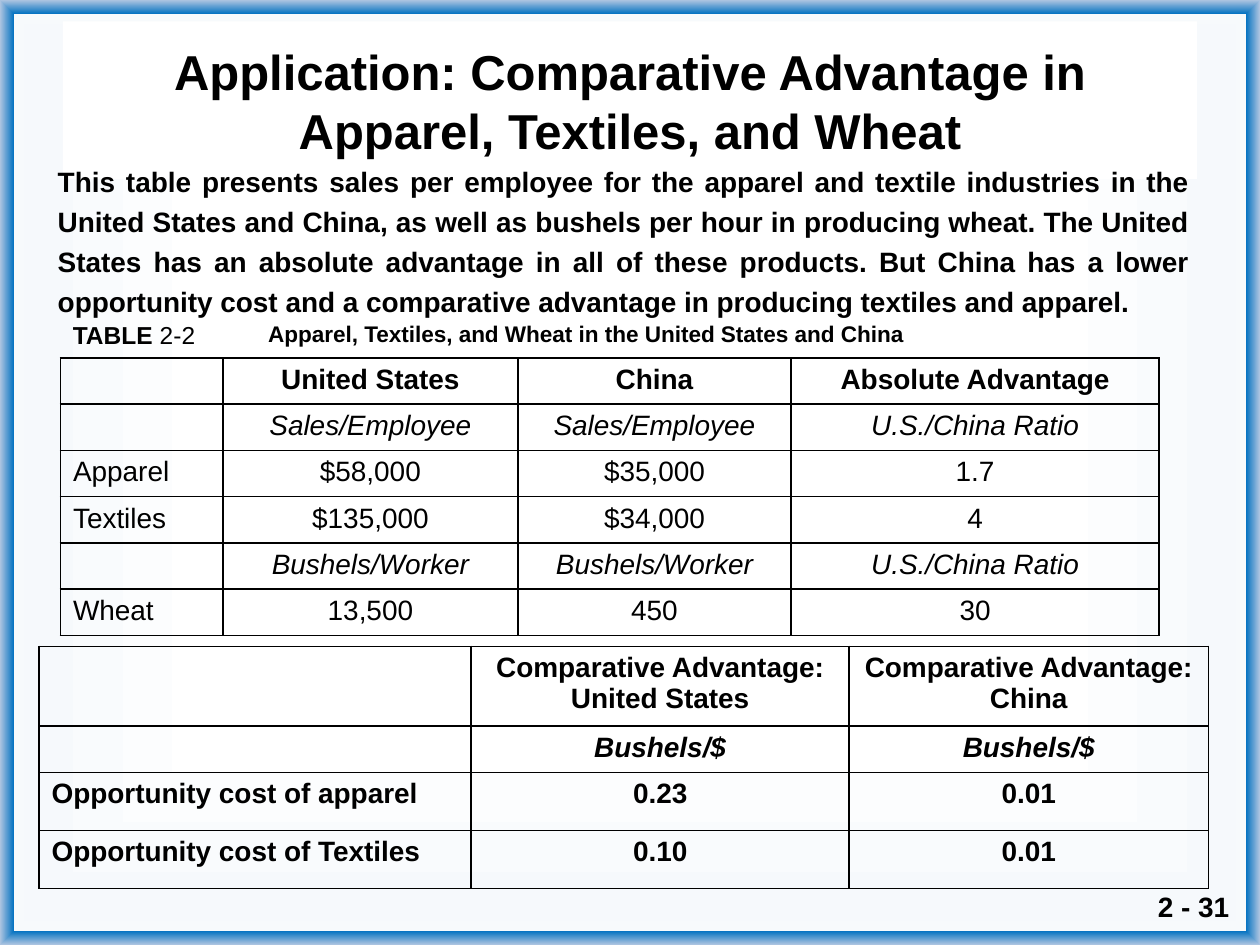
from lxml import etree
from pptx import Presentation
from pptx.dml.color import RGBColor
from pptx.enum import text
from pptx.oxml import parse_xml
from pptx.oxml.ns import qn
from pptx.util import Inches, Pt

BLACK = RGBColor(0x00, 0x00, 0x00)
WHITE = RGBColor(0xFF, 0xFF, 0xFF)
FRAME_STOPS = [
    (53, WHITE),
    (95, RGBColor(0xF6, 0xF9, 0xFC)),
    (97, RGBColor(0xF7, 0xFA, 0xFC)),
    (97, RGBColor(0x00, 0x70, 0xC0)),
    (100, RGBColor(0xB0, 0xC6, 0xE1)),
]
LEFT, CENTER, JUSTIFY = (text.PP_ALIGN.LEFT, text.PP_ALIGN.CENTER,
                         text.PP_ALIGN.JUSTIFY)
MAIN_NS = "http://schemas.openxmlformats.org/drawingml/2006/main"


class Page:
    """Holds the style and the slide being built."""

    font_name = "Arial"
    body_size = 16
    border = Pt(1)

    def __init__(self, deck):
        self.slide = deck.slides.add_slide(deck.slide_layouts[6])

    def style(self, paragraph, size=body_size, bold=True, italic=False, align=LEFT):
        paragraph.alignment = align
        font = paragraph.font
        font.name, font.size = self.font_name, Pt(size)
        font.bold, font.italic = bold, italic
        font.color.rgb = BLACK

    def background(self, stops):
        fill = self.slide.background.fill
        fill.gradient()
        stop_xml = "".join(
            f'<a:gs pos="{pos * 1000}"><a:srgbClr val="{color}"/></a:gs>'
            for pos, color in stops)
        gradient = parse_xml(
            f'<a:gradFill xmlns:a="{MAIN_NS}" rotWithShape="1">'
            f'<a:gsLst>{stop_xml}</a:gsLst><a:path path="shape">'
            '<a:fillToRect l="50000" t="50000" r="50000" b="50000"/>'
            '</a:path></a:gradFill>')
        properties = self.slide.background._cSld.bg.bgPr
        properties.replace(properties.find(qn("a:gradFill")), gradient)

    def text(self, box, words, fill=None, anchor=text.MSO_ANCHOR.TOP,
             wrap=True, before=0, spacing=None, **style):
        shape = self.slide.shapes.add_textbox(*map(Inches, box))
        if fill is not None:
            shape.fill.solid()
            shape.fill.fore_color.rgb = fill
        frame = shape.text_frame
        frame.word_wrap, frame.vertical_anchor = wrap, anchor
        paragraph = frame.paragraphs[0]
        paragraph.text = words
        paragraph.space_before = Pt(before)
        if spacing:
            paragraph.line_spacing = spacing
        self.style(paragraph, **style)
        return paragraph

    def outline(self, cell):
        properties = cell._tc.get_or_add_tcPr()
        for index, side in enumerate(("lnL", "lnR", "lnT", "lnB")):
            line = etree.Element(qn(f"a:{side}"), w=str(self.border))
            solid = etree.SubElement(line, qn("a:solidFill"))
            etree.SubElement(solid, qn("a:srgbClr"), val=str(BLACK))
            properties.insert(index, line)

    def table(self, left, top, columns, heights, rows, bold_rows, italic_rows):
        table = self.slide.shapes.add_table(
            len(rows), len(columns), Inches(left), Inches(top),
            Inches(sum(columns)), Inches(sum(heights))).table
        table.first_row = table.horz_banding = False
        for column, width in zip(table.columns, columns):
            column.width = Inches(width)
        for r, (height, values) in enumerate(zip(heights, rows)):
            table.rows[r].height = Inches(height)
            for c, value in enumerate(values):
                cell = table.cell(r, c)
                cell.text = value
                cell.fill.background()
                self.outline(cell)
                for paragraph in cell.text_frame.paragraphs:
                    self.style(paragraph, bold=r in bold_rows,
                               italic=r in italic_rows,
                               align=CENTER if c else LEFT)


def main():
    deck = Presentation()
    deck.slide_width, deck.slide_height = Inches(10), Inches(7.5)
    page = Page(deck)
    page.background(FRAME_STOPS)

    # Slide number, title and introduction
    page.text((9.09, 7.01, 1.15, 0.37), "2 - 31", wrap=False)
    page.text((0.5, 0.17, 9, 1.25),
              "Application: Comparative Advantage in Apparel, Textiles, and Wheat",
              fill=WHITE, anchor=text.MSO_ANCHOR.MIDDLE, size=28, align=CENTER)
    page.text((0.36, 1.2, 9.18, 1.3),
              "This table presents sales per employee for the apparel and textile "
              "industries in the United States and China, as well as bushels per "
              "hour in producing wheat. The United States has an absolute advantage "
              "in all of these products. But China has a lower opportunity cost and "
              "a comparative advantage in producing textiles and apparel.",
              before=6.2, spacing=1.2, align=JUSTIFY)

    # Table caption
    label = page.text((0.48, 2.49, 1.43, 0.36), "TABLE", size=14, before=2.8)
    number = label.add_run()
    number.text = " 2-2"
    number.font.bold = False
    page.text((2.03, 2.49, 5.66, 0.35),
              "Apparel, Textiles, and Wheat in the United States and China",
              size=12.9, before=2.6)

    # Absolute advantage
    page.table(0.48, 2.84, [1.29, 2.34, 2.17, 2.92], [0.35] * 6, [
        ["", "United States", "China", "Absolute Advantage"],
        ["", "Sales/Employee", "Sales/Employee", "U.S./China Ratio"],
        ["Apparel", "$58,000", "$35,000", "1.7"],
        ["Textiles", "$135,000", "$34,000", "4"],
        ["", "Bushels/Worker", "Bushels/Worker", "U.S./China Ratio"],
        ["Wheat", "13,500", "450", "30"],
    ], bold_rows={0}, italic_rows={1, 4})

    # Opportunity cost
    page.table(0.31, 5.13, [3.43, 3, 2.85], [0.59, 0.35, 0.46, 0.46], [
        ["", "Comparative Advantage: United States",
         "Comparative Advantage:\nChina"],
        ["", "Bushels/$", "Bushels/$"],
        ["Opportunity cost of apparel", "0.23", "0.01"],
        ["Opportunity cost of Textiles", "0.10", "0.01"],
    ], bold_rows=range(4), italic_rows={1})

    deck.save("out.pptx")


if __name__ == "__main__":
    main()
